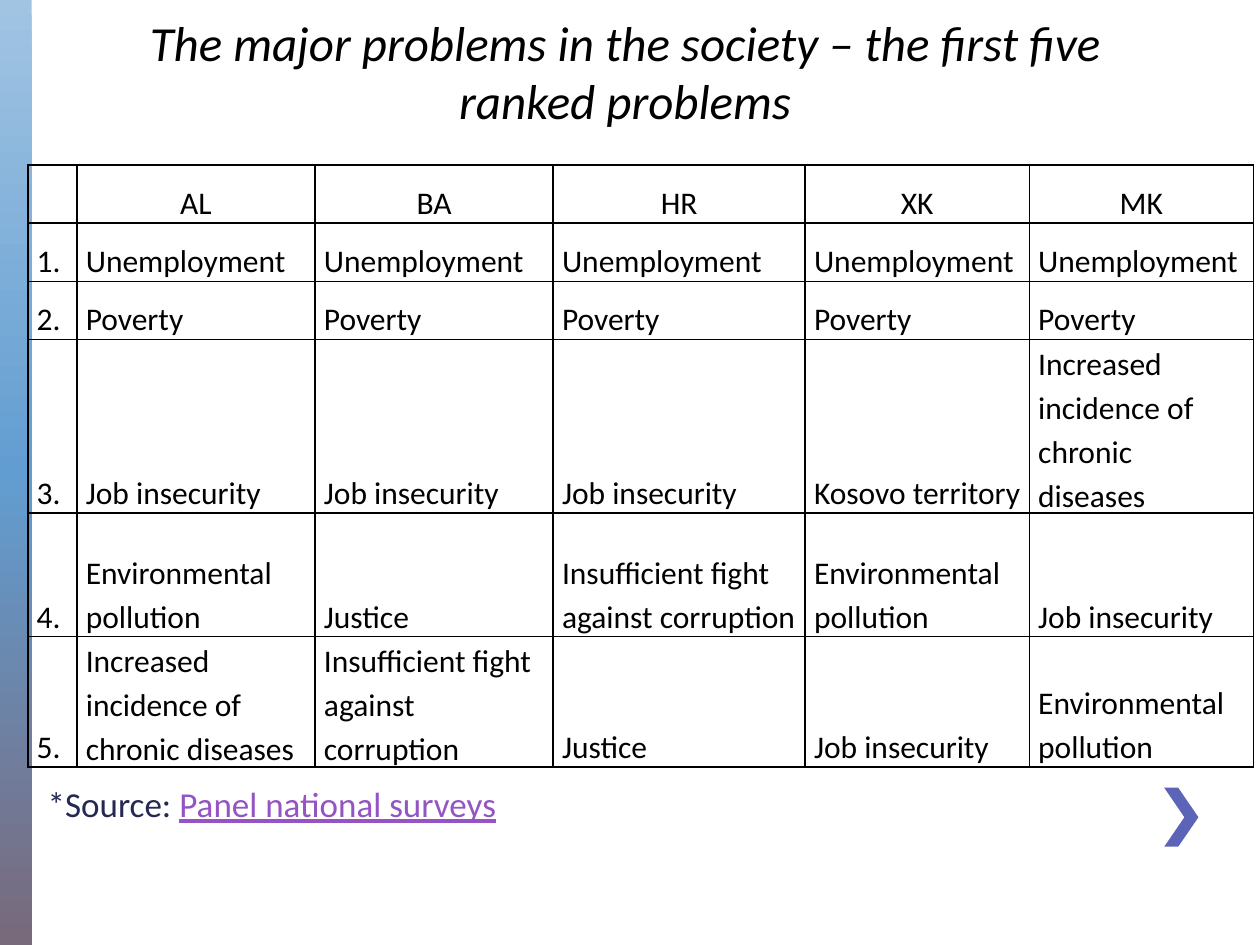
from copy import deepcopy

from pptx import Presentation
from pptx.dml.color import RGBColor
from pptx.enum.shapes import MSO_SHAPE
from pptx.enum.text import MSO_ANCHOR, PP_ALIGN
from pptx.oxml import parse_xml
from pptx.oxml.ns import nsdecls, qn
from pptx.util import Cm, Pt

BLACK = RGBColor(0x00, 0x00, 0x00)
WHITE = RGBColor(0xFF, 0xFF, 0xFF)
NAVY = RGBColor(0x24, 0x28, 0x52)
PURPLE = RGBColor(0x94, 0x54, 0xC3)
INDIGO = RGBColor(0x5C, 0x64, 0xB7)
BAND_COLOURS = (
    RGBColor(0xA1, 0xC4, 0xE3),
    RGBColor(0x62, 0x9D, 0xD1),
    RGBColor(0x78, 0x69, 0x7B),
)
RECTANGLE = MSO_SHAPE.RECTANGLE
BOTTOM = MSO_ANCHOR.BOTTOM
LEFT, CENTER = PP_ALIGN.LEFT, PP_ALIGN.CENTER
FONT = "Calibri"
THIN, THICK = Pt(1), Pt(1.5)

COLUMN_WIDTHS = (0.99, 4.8, 4.8, 5.08, 4.52, 4.52)
ROW_HEIGHTS = (1.17, 1.17, 1.17, 3.3, 2.49, 2.46)
UNEMPLOYMENT, POVERTY, JOBS = "Unemployment", "Poverty", "Job insecurity"
POLLUTION, JUSTICE = "Environmental pollution", "Justice"
CORRUPTION = "Insufficient fight against corruption"
DISEASES = "Increased incidence of chronic diseases"
RANKING = (
    ("", "AL", "BA", "HR", "XK", "MK"),
    ("1.",) + (UNEMPLOYMENT,) * 5,
    ("2.",) + (POVERTY,) * 5,
    ("3.", JOBS, JOBS, JOBS, "Kosovo territory", DISEASES),
    ("4.", POLLUTION, JUSTICE, CORRUPTION, POLLUTION, JOBS),
    ("5.", DISEASES, CORRUPTION, JUSTICE, JOBS, POLLUTION),
)


def add_run(paragraph, text, size, colour):
    """Add a run in the slide font and return its font."""
    run = paragraph.add_run()
    run.text = text
    run.font.name = FONT
    run.font.size = Pt(size)
    run.font.color.rgb = colour
    return run.font


def add_side_band(slide, left, top, width, height):
    """Place the vertical gradient band."""
    band = slide.shapes.add_shape(RECTANGLE, left, top, width, height)
    band.shadow.inherit = False
    band.line.fill.background()
    band.fill.gradient()
    band.fill.gradient_angle = 270
    stop_list = band.fill.gradient_stops[0]._gs.getparent()
    stop_list.insert(1, deepcopy(stop_list[0]))
    for stop, colour, position in zip(band.fill.gradient_stops, BAND_COLOURS, (0, 0.5, 1)):
        stop.color.rgb = colour
        stop.position = position


def add_chevron(slide, left, top, width, height):
    """Draw the chevron that points right."""
    arm, notch, middle = left + width * 0.41, left + width * 0.59, top + height / 2
    builder = slide.shapes.build_freeform(int(arm), top)
    builder.add_line_segments(
        [
            (left, top),
            (int(notch), int(middle)),
            (left, top + height),
            (int(arm), top + height),
            (left + width, int(middle)),
        ],
        close=True,
    )
    chevron = builder.convert_to_shape()
    chevron.shadow.inherit = False
    chevron.fill.solid()
    chevron.fill.fore_color.rgb = INDIGO
    chevron.line.fill.background()


def add_title(slide, left, top, width, height):
    """Place the slide heading."""
    heading = slide.shapes.add_textbox(left, top, width, height)
    heading.fill.solid()
    heading.fill.fore_color.rgb = WHITE
    frame = heading.text_frame
    frame.word_wrap = True
    frame.vertical_anchor = BOTTOM
    paragraph = frame.paragraphs[0]
    paragraph.alignment = CENTER
    title = "The major problems in the society – the first five ranked problems"
    add_run(paragraph, title, 28, BLACK).italic = True


def set_borders(cell, widths):
    """Give a cell black borders from a mapping of side to width."""
    properties = cell._tc.get_or_add_tcPr()
    for index, side in enumerate("LRTB"):
        border = parse_xml(
            f'<a:ln{side} {nsdecls("a")} w="{widths[side]}"><a:solidFill>'
            f'<a:srgbClr val="{BLACK}"/></a:solidFill></a:ln{side}>'
        )
        properties.insert(index, border)


def fill_cell(cell, text, alignment):
    """Format a ranking cell and write its text."""
    cell.fill.background()
    cell.vertical_anchor = BOTTOM
    cell.margin_left = cell.margin_right = Cm(0.18)
    cell.margin_top = cell.margin_bottom = 0
    paragraph = cell.text_frame.paragraphs[0]
    paragraph.alignment = alignment
    paragraph.line_spacing = 1.15
    if text:
        add_run(paragraph, text, 18, BLACK)


def add_ranking(slide, left, top, width, height):
    """Place the table of ranked problems by country."""
    table = slide.shapes.add_table(
        len(ROW_HEIGHTS), len(COLUMN_WIDTHS), left, top, width, height
    ).table
    table.first_row = table.horz_banding = False
    for column, column_width in zip(table.columns, COLUMN_WIDTHS):
        column.width = Cm(column_width)
    for row, row_height in zip(table.rows, ROW_HEIGHTS):
        row.height = Cm(row_height)
    for r, problems in enumerate(RANKING):
        for c, problem in enumerate(problems):
            cell = table.cell(r, c)
            fill_cell(cell, problem, CENTER if r == 0 else LEFT)
            set_borders(
                cell,
                {
                    "L": THICK if c == 1 else THIN,
                    "R": THICK if c == 0 else THIN,
                    "T": THICK if r == 1 else THIN,
                    "B": THICK if r == 0 else THIN,
                },
            )


def add_source(slide, left, top, width, height):
    """Place the source line under the table."""
    frame = slide.shapes.add_textbox(left, top, width, height).text_frame
    frame.word_wrap = True
    paragraph = frame.paragraphs[0]
    add_run(paragraph, "*Source: ", 20, NAVY)
    add_run(paragraph, "Panel national surveys", 20, PURPLE).underline = True


def main():
    """Build the slide and save it."""
    presentation = Presentation()
    presentation.slide_width, presentation.slide_height = Cm(25.4), Cm(19.05)
    slide = presentation.slides.add_slide(presentation.slide_layouts[6])
    add_side_band(slide, 0, 0, Cm(0.64), presentation.slide_height)
    add_chevron(slide, Cm(23.47), Cm(15.88), Cm(0.69), Cm(1.19))
    add_title(slide, Cm(1.5), Cm(0.53), Cm(22.2), Cm(2.21))
    add_source(slide, Cm(0.71), Cm(15.65), Cm(20), Cm(1.1))
    add_ranking(slide, Cm(0.56), Cm(3.33), Cm(sum(COLUMN_WIDTHS)), Cm(sum(ROW_HEIGHTS)))
    presentation.save("out.pptx")


if __name__ == "__main__":
    main()
